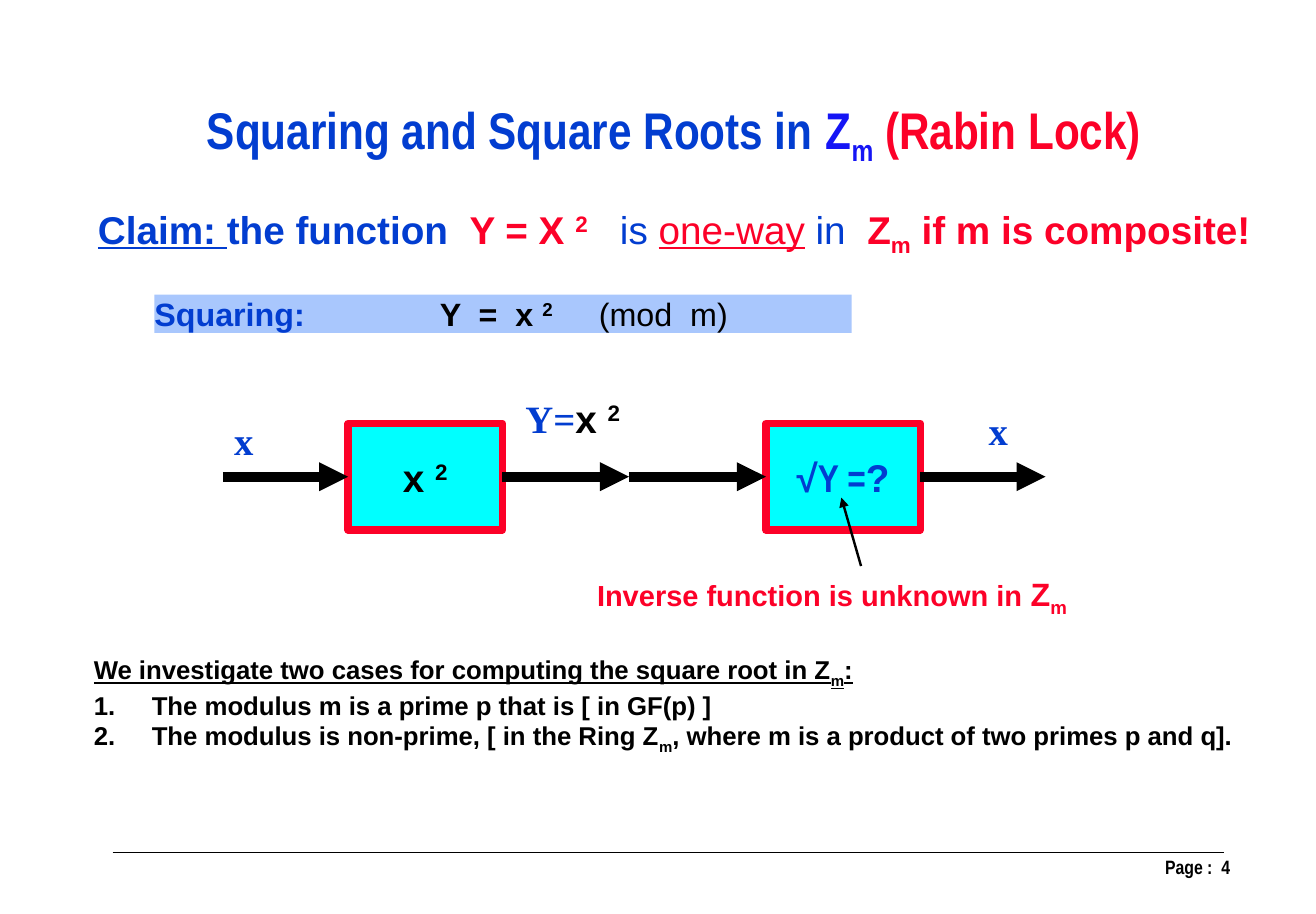
from lxml import etree
from pptx import Presentation
from pptx import util as u
from pptx.dml.color import RGBColor
from pptx.enum import shapes, text
from pptx.oxml.ns import qn

COLORS = {
    "blue": "023DD0", "violet": "1515F5", "red": "FC0128",
    "black": "000000", "cyan": "00FFFF", "pale": "A9C7FD",
}
G = u.Inches(0.01)  # grid of 1134 columns by 788 rows
LEFT, CENTER, RIGHT = text.PP_ALIGN.LEFT, text.PP_ALIGN.CENTER, text.PP_ALIGN.RIGHT
TOP, MIDDLE = text.MSO_ANCHOR.TOP, text.MSO_ANCHOR.MIDDLE
SUB, SUP = {"base": -25}, {"base": 30}

prs = Presentation()
prs.slide_width, prs.slide_height = G * 1134, G * 788
s = prs.slides.add_slide(prs.slide_layouts[5])


def write(p, parts, align=LEFT, **common):
    """Add runs to p; each part is its text and its changes to the common format."""
    p.alignment = align
    for words, changes in parts:
        fmt = {"size": 24, "color": "blue", "font": "Arial", "bold": True,
               "under": False, "base": 0, **common, **changes}
        r = p.add_run()
        r.text = words
        r.font.size, r.font.name = u.Pt(fmt["size"]), fmt["font"]
        r.font.bold, r.font.underline = fmt["bold"], fmt["under"]
        r.font.color.rgb = RGBColor.from_string(COLORS[fmt["color"]])
        if fmt["base"]:
            r._r.get_or_add_rPr().set("baseline", str(fmt["base"] * 1000))


def add_line(start, end, width, arrow=True):
    """Join two points; a point may also be a (shape, side) pair."""
    ends = [(0, 0) if hasattr(e[0], "shape_id") else e for e in (start, end)]
    c = s.shapes.add_connector(shapes.MSO_CONNECTOR.STRAIGHT,
                               *(G * v for point in ends for v in point))
    if hasattr(start[0], "shape_id"):
        c.begin_connect(*start)
    if hasattr(end[0], "shape_id"):
        c.end_connect(*end)
    c.line.width = u.Pt(width)
    c.line.color.rgb = RGBColor.from_string(COLORS["black"])
    if arrow:
        etree.SubElement(c.line._get_or_add_ln(), qn("a:tailEnd"), type="triangle")
    etree.SubElement(c._element.spPr, qn("a:effectLst"))


# Title
title = s.shapes.title
title.left, title.top, title.width, title.height = G * 73, G * 79, G * 1016, G * 70
tf = title.text_frame
tf.auto_size, tf.vertical_anchor = text.MSO_AUTO_SIZE.NONE, TOP
write(tf.paragraphs[0], [
    ("Squaring and Square Roots in ", {}),
    ("Z", {"color": "violet"}),
    ("m", {"color": "violet", **SUB}),
    (" (Rabin Lock)", {"color": "red"}),
], CENTER, size=32, font="Arial Narrow")

# Filled rectangles: the squaring formula and the two function blocks
blocks = []
for left, top, width, height, fill, border, align, parts in [
    (133, 254, 601, 33, "pale", None, LEFT, [
        ("Squaring:\t", {"size": 20}),
        ("Y  =  x ", {"size": 20, "color": "black"}),
        ("2", {"size": 20, "color": "black", **SUP}),
        ("\t(mod  m)", {"size": 20, "color": "black", "bold": False})]),
    (300, 365, 133, 92, "cyan", "red", CENTER, [
        ("x ", {"color": "black"}), ("2", {"color": "black", **SUP})]),
    (660, 365, 133, 92, "cyan", "red", CENTER, [
        ("√Y =", {"font": "Arial Narrow"}), ("?", {})]),
]:
    sp = s.shapes.add_shape(shapes.MSO_SHAPE.RECTANGLE,
                            G * left, G * top, G * width, G * height)
    sp.shadow.inherit = False
    sp.fill.solid()
    sp.fill.fore_color.rgb = RGBColor.from_string(COLORS[fill])
    if border:
        sp.line.color.rgb = RGBColor.from_string(COLORS[border])
        sp.line.width = u.Pt(4.5)
    else:
        sp.line.fill.background()
    tf = sp.text_frame
    tf.margin_left = tf.margin_right = tf.margin_top = tf.margin_bottom = 0
    write(tf.paragraphs[0], parts, align)
    blocks.append(sp)

formula, square, root = blocks
tabs = etree.SubElement(formula.text_frame.paragraphs[0]._p.get_or_add_pPr(), qn("a:tabLst"))
for stop in (246, 383):
    etree.SubElement(tabs, qn("a:tab"), pos=str(G * stop), algn="l")

# Signal flow through the blocks
flow, junction = 411, (542, 411)
add_line((192, flow), (square, 1), 6)
add_line((square, 3), junction, 6)
add_line(junction, (root, 1), 6)
add_line((root, 3), (901, flow), 6)
add_line((742, 488), (725, 429), 1.5)
add_line((97, 735), (1055, 735), 0.75, arrow=False)

# Single-line texts
signal = {"font": "Times New Roman"}
for left, top, width, height, anchor, align, common, parts in [
    (73, 175, 1016, 50, MIDDLE, CENTER, {}, [
        ("Claim: ", {"under": True}),
        ("the function  ", {}),
        ("Y = X ", {"color": "red"}),
        ("2", {"color": "red", **SUP}),
        ("   is ", {"bold": False}),
        ("one-way", {"color": "red", "bold": False, "under": True}),
        (" in  ", {"bold": False}),
        ("Z", {"color": "red"}),
        ("m", {"color": "red", **SUB}),
        (" if m is composite!", {"color": "red"})]),
    (192, 354, 36, 50, MIDDLE, CENTER, signal, [("x", {})]),
    (442, 335, 103, 50, MIDDLE, CENTER, {"color": "black"}, [
        ("Y=", {"color": "blue", **signal}), ("x ", {}), ("2", SUP)]),
    (842, 346, 36, 50, MIDDLE, CENTER, signal, [("x", {})]),
    (500, 490, 434, 44, TOP, CENTER, {"size": 20, "color": "red"}, [
        ("Inverse function is unknown in ", {"size": 18}), ("Z", {}), ("m", SUB)]),
    (814, 732, 256, 40, TOP, RIGHT,
     {"size": 12, "font": "Arial Narrow", "color": "black"}, [("Page :  4", {})]),
]:
    tf = s.shapes.add_textbox(G * left, G * top, G * width, G * height).text_frame
    tf.vertical_anchor = anchor
    tf.word_wrap = False
    write(tf.paragraphs[0], parts, align, **common)

# The two cases
tf = s.shapes.add_textbox(G * 71, G * 559, G * 1025, G * 91).text_frame
tf.word_wrap = True
write(tf.paragraphs[0], [
    ("We investigate two cases for computing the square root in Z", {}), ("m", SUB), (":", {}),
], size=16, color="black", under=True)
for case in [
    [("The modulus m is a prime p that is [ in GF(p) ]", {})],
    [("The modulus is non-prime, [ in the Ring Z", {}), ("m", SUB),
     (", where m is a product of two primes p and q].", {})],
]:
    p = tf.add_paragraph()
    write(p, case, size=16, color="black")
    pPr = p._p.get_or_add_pPr()
    pPr.set("marL", str(G * 50))
    pPr.set("indent", str(G * -50))
    etree.SubElement(pPr, qn("a:buFont"), typeface="+mj-lt")
    etree.SubElement(pPr, qn("a:buAutoNum"), type="arabicPeriod")

prs.save("out.pptx")
